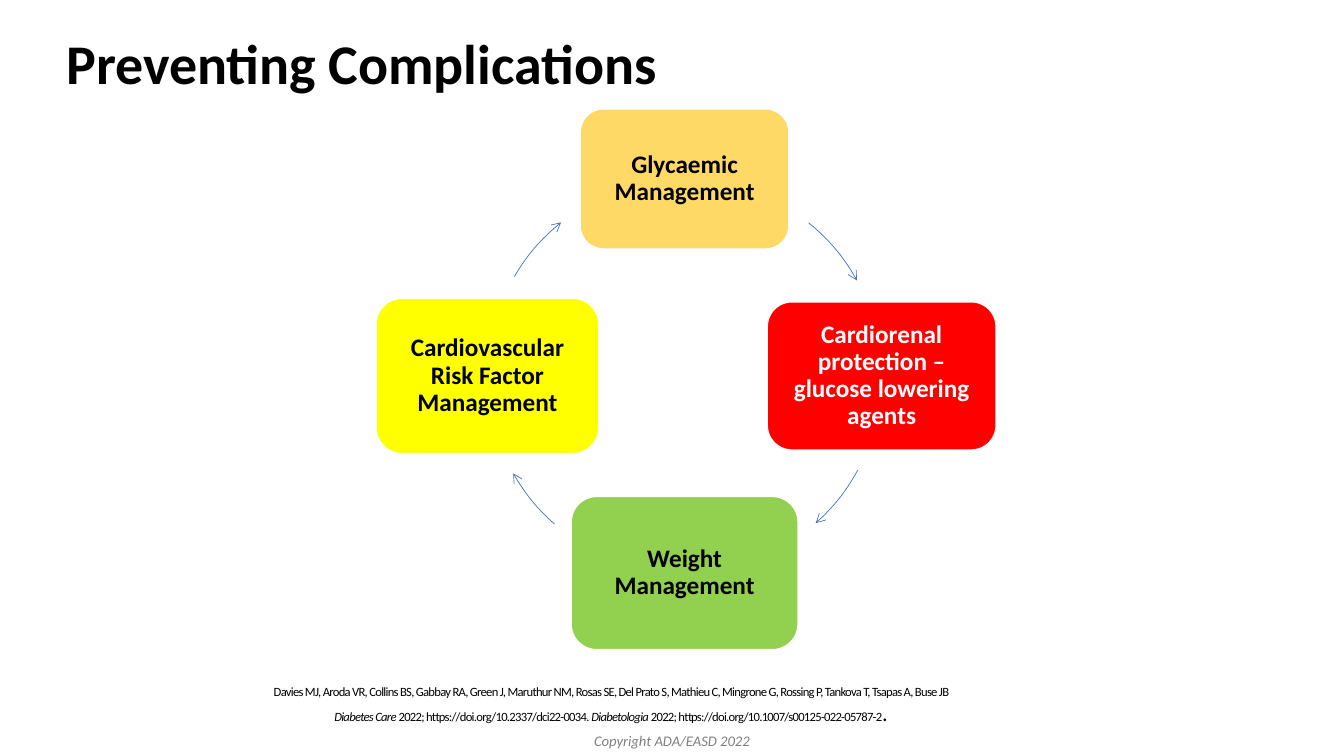
from math import cos, radians, sin

from lxml import etree
from pptx import Presentation
from pptx.dml.color import RGBColor
from pptx.enum.shapes import MSO_SHAPE
from pptx.enum.text import MSO_ANCHOR, PP_ALIGN
from pptx.oxml.ns import qn
from pptx.util import Inches, Pt

ROUNDED, ARC = MSO_SHAPE.ROUNDED_RECTANGLE, MSO_SHAPE.ARC
TOP, MIDDLE = MSO_ANCHOR.TOP, MSO_ANCHOR.MIDDLE
LEFT, CENTER = PP_ALIGN.LEFT, PP_ALIGN.CENTER

BLACK = RGBColor(0x00, 0x00, 0x00)
WHITE = RGBColor(0xFF, 0xFF, 0xFF)
GREY = RGBColor(0x80, 0x80, 0x80)
AMBER = RGBColor(0xFF, 0xD9, 0x66)
RED = RGBColor(0xFF, 0x00, 0x00)
GREEN = RGBColor(0x92, 0xD0, 0x50)
YELLOW = RGBColor(0xFF, 0xFF, 0x00)
BLUE = RGBColor(0x44, 0x72, 0xC4)

# Content
TITLE = "Preventing Complications"
COPYRIGHT = "Copyright ADA/EASD 2022"
# Steps clockwise from the top: text, width, height, fill, text colour
STEPS = [
    ("Glycaemic Management", 2.07, 1.39, AMBER, BLACK),
    ("Cardiorenal protection – glucose lowering agents", 2.27, 1.47, RED, WHITE),
    ("Weight Management", 2.25, 1.52, GREEN, BLACK),
    ("Cardiovascular Risk Factor Management", 2.21, 1.54, YELLOW, BLACK),
]
# Start and end angle of each arrow, in degrees clockwise from the right
ARROWS = [(309, 331), (28.5, 48.3), (131.3, 150.4), (210.3, 231.2)]
AUTHORS = ("Davies MJ, Aroda VR, Collins BS, Gabbay RA, Green J, Maruthur NM, Rosas SE, "
           "Del Prato S, Mathieu C, Mingrone G, Rossing P, Tankova T, Tsapas A, Buse JB")
# Reference runs: text, size, italic
REFERENCE = [
    ("Diabetes Care ", 9, True),
    ("2022; https://doi.org/10.2337/dci22-0034. ", 9, False),
    ("Diabetologia ", 9, True),
    ("2022; https://doi.org/10.1007/s00125-022-05787-2", 9, False),
    (".", 16, False),
]

# Layout
CENTER_X, CENTER_Y, RADIUS = 6.79, 3.73, 1.955
QUARTER = 360 / len(STEPS)
STEP_INSET = 0.14
ARC_UNITS_PER_DEGREE = 0.6

presentation = Presentation()
presentation.slide_width, presentation.slide_height = Inches(13.33), Inches(7.5)
slide = presentation.slides.add_slide(presentation.slide_layouts[6])


def set_frame(shape, **values):
    for name, value in values.items():
        setattr(shape.text_frame, name, value)


def add_run(paragraph, text, color, **values):
    run = paragraph.add_run()
    run.text = text
    run.font.name = "Calibri"
    run.font.color.rgb = color
    for name, value in values.items():
        setattr(run.font, name, value)
    return run


def add_text_box(left, top, width, height, alignment, wrap):
    box = slide.shapes.add_textbox(*map(Inches, (left, top, width, height)))
    set_frame(box, word_wrap=wrap, vertical_anchor=TOP)
    paragraph = box.text_frame.paragraphs[0]
    paragraph.alignment = alignment
    return paragraph


def add_shape(kind, left, top, width, height, line_color, line_width):
    shape = slide.shapes.add_shape(kind, *map(Inches, (left, top, width, height)))
    shape.shadow.inherit = False
    shape.line.color.rgb = line_color
    shape.line.width = Pt(line_width)
    return shape


# Title and copyright line
paragraph = add_text_box(0.56, 0.31, 12.12, 1.25, LEFT, True)
paragraph.line_spacing = 0.9
add_run(paragraph, TITLE, BLACK, size=Pt(40), bold=True)
paragraph = add_text_box(5.74, 7.21, 1.85, 0.29, CENTER, False)
add_run(paragraph, COPYRIGHT, GREY, size=Pt(10.5), italic=True)

# Steps, centred on the circle a quarter turn apart
for index, (text, width, height, fill, color) in enumerate(STEPS):
    angle = radians(index * QUARTER - 90)
    left = CENTER_X + RADIUS * cos(angle) - width / 2
    top = CENTER_Y + RADIUS * sin(angle) - height / 2
    step = add_shape(ROUNDED, left, top, width, height, WHITE, 1)
    step.fill.solid()
    step.fill.fore_color.rgb = fill
    inset = Inches(STEP_INSET)
    set_frame(step, word_wrap=True, vertical_anchor=MIDDLE, margin_left=inset,
              margin_right=inset, margin_top=inset, margin_bottom=inset)
    paragraph = step.text_frame.paragraphs[0]
    paragraph.alignment = CENTER
    paragraph.line_spacing = 0.9
    add_run(paragraph, text, color, size=Pt(18), bold=True)

# Curved arrows along the same circle
for angles in ARROWS:
    arrow = add_shape(ARC, CENTER_X - RADIUS, CENTER_Y - RADIUS,
                      2 * RADIUS, 2 * RADIUS, BLUE, 0.5)
    arrow.fill.background()
    for index, angle in enumerate(angles):
        arrow.adjustments[index] = angle * ARC_UNITS_PER_DEGREE
    line = arrow.line.fill._xPr
    etree.SubElement(line, qn("a:tailEnd")).set("type", "arrow")

# Reference
paragraph = add_text_box(2.54, 6.74, 7.04, 0.76, CENTER, False)
runs = [add_run(paragraph, AUTHORS, BLACK, size=Pt(9))]
paragraph.add_line_break()
for text, size, italic in REFERENCE:
    runs.append(add_run(paragraph, text, BLACK, size=Pt(size), italic=italic))
for run in runs:
    run.font._element.set("spc", "-50")

presentation.save("out.pptx")
